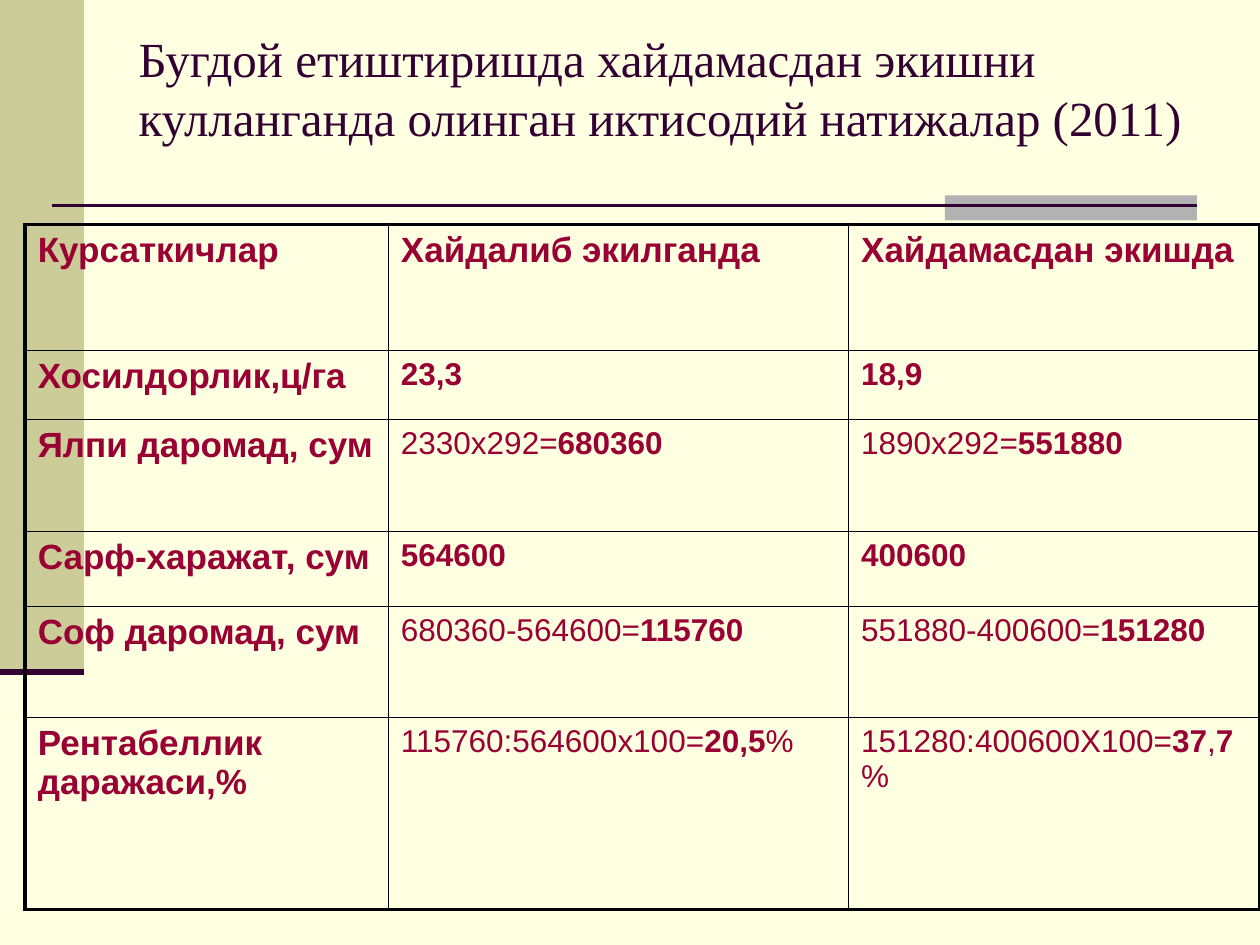
from lxml import etree
from pptx import Presentation
from pptx.dml.color import RGBColor
from pptx.enum.shapes import MSO_CONNECTOR, MSO_SHAPE
from pptx.enum.text import MSO_ANCHOR, MSO_AUTO_SIZE, PP_ALIGN
from pptx.oxml.ns import qn
from pptx.util import Pt

RECTANGLE = MSO_SHAPE.RECTANGLE
STRAIGHT = MSO_CONNECTOR.STRAIGHT
MIDDLE = MSO_ANCHOR.MIDDLE
NO_AUTOFIT = MSO_AUTO_SIZE.NONE
LEFT = PP_ALIGN.LEFT

CREAM, OLIVE, GRAY = "FFFFE1", "CCCC99", "B2B2B2"
PLUM, CRIMSON, BLACK = "330033", "990033", "000000"
OUTER_BORDER, INNER_BORDER = 2.25, 1

TITLE = "Бугдой етиштиришда хайдамасдан экишни кулланганда олинган иктисодий натижалар (2011)\v"
COLUMN_WIDTHS = [207.5, 263, 235]
ROW_HEIGHTS = [72, 39.5, 64, 43, 63.5, 109.5]
# Text between asterisks is bold.
ROWS = [
    ["*Курсаткичлар*", "*Хайдалиб экилганда*", "*Хайдамасдан экишда*"],
    ["*Хосилдорлик,ц/га*", "*23,3*", "*18,9*"],
    ["*Ялпи даромад, сум*", "2330х292=*680360*", "1890х292=*551880*"],
    ["*Сарф-харажат, сум*", "*564600*", "*400600*"],
    ["*Соф даромад, сум*", "680360-564600=*115760*", "551880-400600=*151280*"],
    ["*Рентабеллик даражаси,%*", "115760:564600х100=*20,5*%", "151280:400600Х100=*37*,*7*%"],
]


def color(hex_value):
    return RGBColor.from_string(hex_value)


def add_block(page, box, fill):
    block = page.shapes.add_shape(RECTANGLE, *map(Pt, box))
    block.shadow.inherit = False
    block.fill.solid()
    block.fill.fore_color.rgb = color(fill)
    block.line.fill.background()


def add_rule(page, left, top, width, weight):
    rule = page.shapes.add_connector(STRAIGHT, Pt(left), Pt(top), Pt(left + width), Pt(top))
    rule.line.color.rgb = color(PLUM)
    rule.line.width = Pt(weight)
    etree.SubElement(rule._element.spPr, qn("a:effectLst"))


def add_side_band(page, box):
    left, top, width, height = box
    add_block(page, box, OLIVE)
    add_rule(page, left, top + height, width, 3.5)


def add_divider(page, box):
    """Thin rule over a gray tab that ends at the same right edge."""
    left, top, width, height = box
    tab_width = 144
    add_block(page, (left + width - tab_width, top, tab_width, height), GRAY)
    add_rule(page, left, top + 5.8, width, 1.5)


def add_title(page, box):
    title = page.shapes.title
    title.left, title.top, title.width, title.height = map(Pt, box)
    frame = title.text_frame
    frame.word_wrap = True
    frame.auto_size = NO_AUTOFIT
    frame.vertical_anchor = MIDDLE
    frame.text = TITLE
    para = frame.paragraphs[0]
    para.alignment = LEFT
    para.font.name = "Times New Roman"
    para.font.size = Pt(28)
    para.font.color.rgb = color(PLUM)


def set_borders(cell, weights):
    """Draw black cell borders; weights go left, right, top, bottom."""
    properties = cell._tc.get_or_add_tcPr()
    for side, weight in zip("LRTB", weights):
        line = etree.SubElement(properties, qn(f"a:ln{side}"), w=str(Pt(weight)))
        fill = etree.SubElement(line, qn("a:solidFill"))
        etree.SubElement(fill, qn("a:srgbClr"), val=BLACK)


def fill_cell(cell, text, size):
    para = cell.text_frame.paragraphs[0]
    para.font.name = "Arial"
    para.font.size = Pt(size)
    para.font.color.rgb = color(CRIMSON)
    for index, part in enumerate(text.split("*")):
        if part:
            span = para.add_run()
            span.text = part
            span.font.bold = index % 2 == 1


def add_results_table(page, left, top):
    row_count, column_count = len(ROWS), len(COLUMN_WIDTHS)
    table = page.shapes.add_table(
        row_count, column_count, Pt(left), Pt(top), Pt(sum(COLUMN_WIDTHS)), Pt(sum(ROW_HEIGHTS))
    ).table
    table.first_row = table.horz_banding = False
    for column, width in zip(table.columns, COLUMN_WIDTHS):
        column.width = Pt(width)
    for r, (row, height) in enumerate(zip(table.rows, ROW_HEIGHTS)):
        row.height = Pt(height)
        for c, cell in enumerate(row.cells):
            on_edge = (c == 0, c == column_count - 1, r == 0, r == row_count - 1)
            set_borders(cell, [OUTER_BORDER if edge else INNER_BORDER for edge in on_edge])
            cell.fill.background()
            fill_cell(cell, ROWS[r][c], 20 if r == 0 or c == 0 else 18)


def main():
    deck = Presentation()
    deck.slide_width, deck.slide_height = Pt(720), Pt(540)
    page = deck.slides.add_slide(deck.slide_layouts.get_by_name("Title Only"))
    page.background.fill.solid()
    page.background.fill.fore_color.rgb = color(CREAM)
    add_side_band(page, (0, 0, 48, 384))
    add_divider(page, (30, 111.6, 654, 14.4))
    add_title(page, (72, 21.6, 612, 90))
    add_results_table(page, 14.4, 128.2)
    deck.save("out.pptx")


if __name__ == "__main__":
    main()
